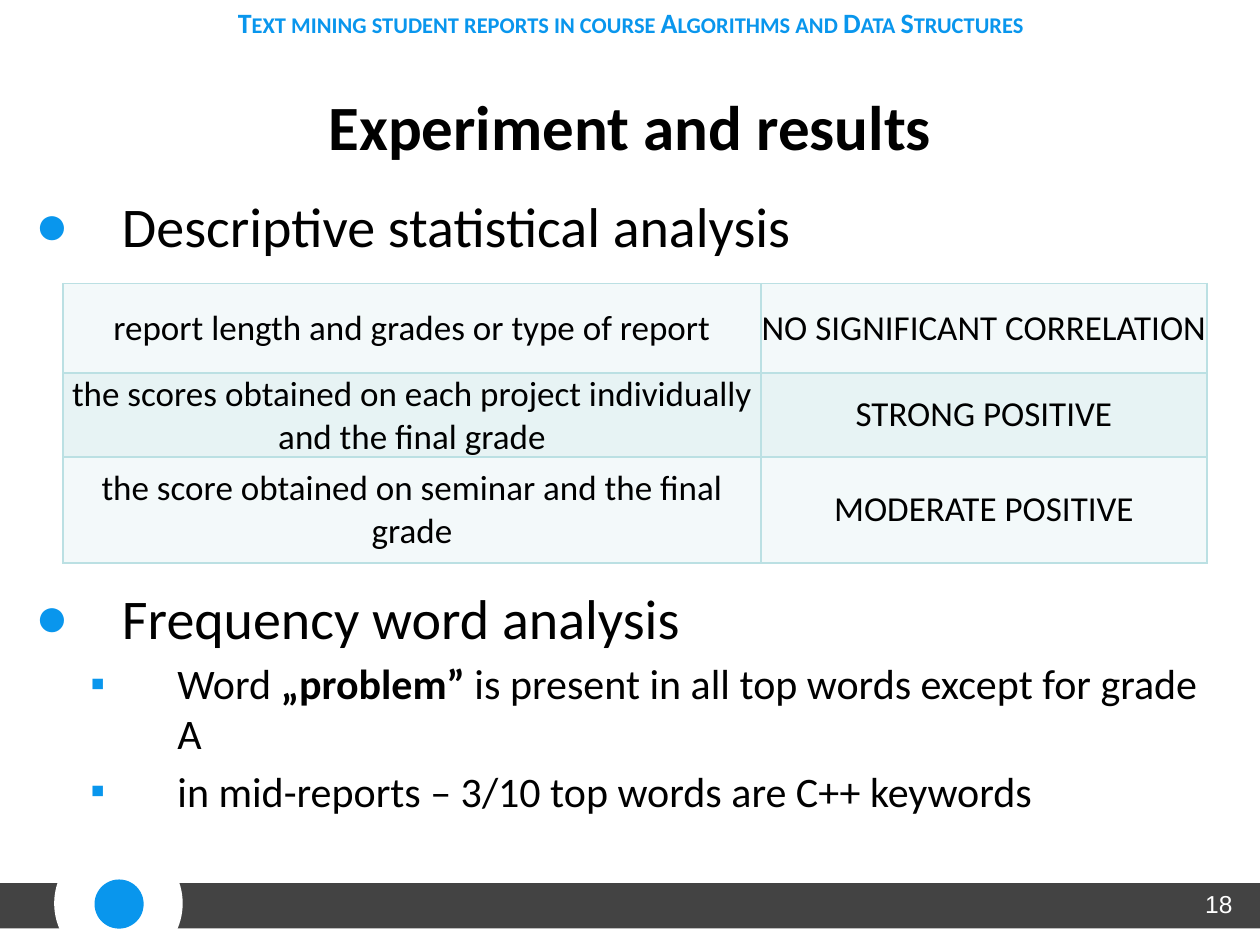
from lxml import etree
from pptx import Presentation
from pptx.dml.color import RGBColor
from pptx.enum.shapes import MSO_SHAPE
from pptx.enum.text import MSO_ANCHOR, PP_ALIGN
from pptx.oxml.ns import qn
from pptx.util import Inches, Pt

RECT, OVAL = MSO_SHAPE.RECTANGLE, MSO_SHAPE.OVAL
TOP, MIDDLE = MSO_ANCHOR.TOP, MSO_ANCHOR.MIDDLE
LEFT, CENTER, RIGHT = PP_ALIGN.LEFT, PP_ALIGN.CENTER, PP_ALIGN.RIGHT

COLORS = {
    "text": "000000",
    "accent": "0996ED",
    "band": "434343",
    "white": "FFFFFF",
    "border": "BBE0E3",
    "row_light": "F3F9FA",
    "row_dark": "E7F3F4",
}


def rgb(name):
    return RGBColor.from_string(COLORS[name])


def add_run(p, text, size=20, font="Calibri", color="text", bold=False, small_caps=False):
    r = p.add_run()
    r.text = text
    r.font.size = Pt(size)
    r.font.name = font
    r.font.bold = bold
    r.font.color.rgb = rgb(color)
    if small_caps:
        r._r.get_or_add_rPr().set("cap", "small")


class SlideBuilder:
    def __init__(self, s):
        self.s = s

    def shape(self, kind, x, y, w, h, fill):
        sp = self.s.shapes.add_shape(kind, Inches(x), Inches(y), Inches(w), Inches(h))
        sp.shadow.inherit = False
        sp.fill.solid()
        sp.fill.fore_color.rgb = rgb(fill)
        sp.line.fill.background()

    def frame(self, x, y, w, h, anchor=TOP):
        sp = self.s.shapes.add_textbox(Inches(x), Inches(y), Inches(w), Inches(h))
        tf = sp.text_frame
        tf.word_wrap = True
        tf.vertical_anchor = anchor
        return tf

    def label(self, text, x, y, w, h, align=CENTER, anchor=MIDDLE, **style):
        p = self.frame(x, y, w, h, anchor).paragraphs[0]
        p.alignment = align
        add_run(p, text, **style)

    def bullets(self, items, x, y, w, h):
        """Each item is (level, [(text, bold), ...])."""
        tf = self.frame(x, y, w, h)
        for i, (level, runs) in enumerate(items):
            p = tf.add_paragraph() if i else tf.paragraphs[0]
            p.alignment = LEFT
            p.level = level
            p.space_before = Pt(4 if i else 0)
            self.bullet(p, "●▪"[level], (0.69, 1.13)[level])
            for text, bold in runs:
                add_run(p, text, size=(32, 24)[level], bold=bold)

    def bullet(self, p, char, margin):
        pPr = p._p.get_or_add_pPr()
        pPr.set("marL", str(Inches(margin)))
        pPr.set("indent", str(-Inches(0.69)))
        clr = etree.SubElement(pPr, qn("a:buClr"))
        etree.SubElement(clr, qn("a:srgbClr"), val=COLORS["accent"])
        etree.SubElement(pPr, qn("a:buFont"), typeface="Arial")
        etree.SubElement(pPr, qn("a:buChar"), char=char)

    def table(self, rows, x, y, widths, heights):
        table = self.s.shapes.add_table(
            len(rows), len(widths), Inches(x), Inches(y),
            Inches(sum(widths)), Inches(sum(heights))).table
        table.first_row = False
        for col, w in zip(table.columns, widths):
            col.width = Inches(w)
        for i, (texts, h) in enumerate(zip(rows, heights)):
            table.rows[i].height = Inches(h)
            for j, text in enumerate(texts):
                self.cell(table.cell(i, j), text, "row_dark" if i % 2 else "row_light")

    def cell(self, cell, text, fill):
        cell.margin_left = cell.margin_right = cell.margin_top = cell.margin_bottom = 0
        cell.vertical_anchor = MIDDLE
        tcPr = cell._tc.get_or_add_tcPr()
        for side in ("lnL", "lnR", "lnT", "lnB"):
            ln = etree.SubElement(tcPr, qn("a:" + side), w=str(Pt(1)))
            solid = etree.SubElement(ln, qn("a:solidFill"))
            etree.SubElement(solid, qn("a:srgbClr"), val=COLORS["border"])
        cell.fill.solid()
        cell.fill.fore_color.rgb = rgb(fill)
        p = cell.text_frame.paragraphs[0]
        p.alignment = CENTER
        add_run(p, text)


def main():
    prs = Presentation()
    prs.slide_width, prs.slide_height = Inches(10), Inches(7.5)
    s = SlideBuilder(prs.slides.add_slide(prs.slide_layouts[6]))

    # Footer band with the round emblem
    s.shape(RECT, 0, 7.01, 0.51, 0.36, "band")
    s.shape(RECT, 1.38, 7.01, 8.62, 0.36, "band")
    s.shape(OVAL, 0.43, 6.66, 1.02, 1.02, "white")
    s.shape(OVAL, 0.75, 6.98, 0.39, 0.39, "accent")
    s.label("18", 8.31, 7.01, 1.57, 0.52, align=RIGHT, anchor=TOP,
            size=14, font="Arial", color="white")

    # Running header and title
    s.label("Text mining student reports in course Algorithms and Data Structures",
            0.12, 0, 9.77, 0.36, size=16, color="accent", bold=True, small_caps=True)
    s.label("Experiment and results", 0.5, 0.37, 9, 1.25, size=36, bold=True)

    # Correlation results
    s.bullets([(0, [("Descriptive statistical analysis", False)])], 0.18, 1.47, 9.63, 0.7)
    s.table([
        ("report length and grades or type of report", "NO SIGNIFICANT CORRELATION"),
        ("the scores obtained on each project individually and the final grade",
         "STRONG POSITIVE"),
        ("the score obtained on seminar and the final grade", "MODERATE POSITIVE"),
    ], 0.5, 2.25, widths=(5.54, 3.54), heights=(0.71, 0.61, 0.84))

    # Word frequency results
    s.bullets([
        (0, [("Frequency word analysis", False)]),
        (1, [("Word ", False), ("„problem” ", True),
             ("is present in all top words except for grade A", False)]),
        (1, [("in mid-reports – 3/10 top words are C++ keywords", False)]),
    ], 0.18, 4.58, 9.63, 2.24)

    prs.save("out.pptx")


if __name__ == "__main__":
    main()
